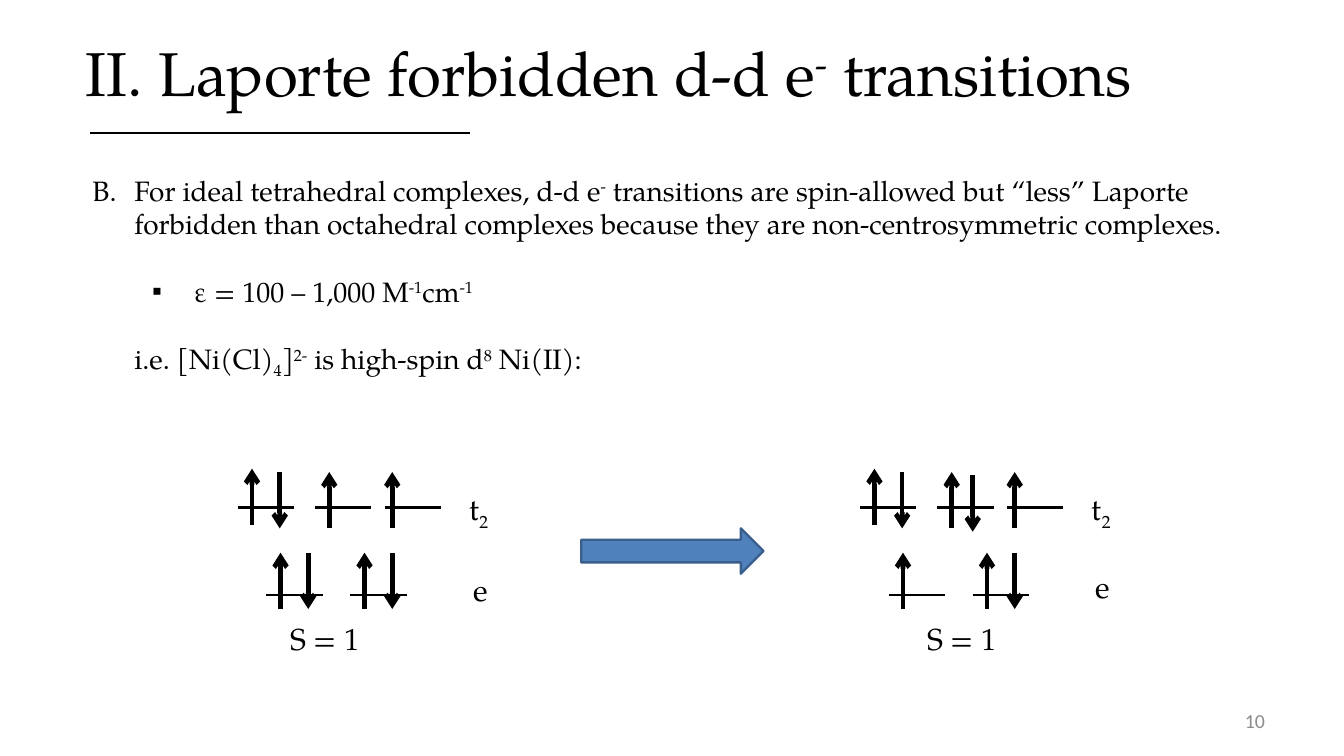
from lxml import etree
from pptx import Presentation
from pptx.dml.color import RGBColor
from pptx.enum.shapes import MSO_CONNECTOR, MSO_SHAPE
from pptx.enum.text import MSO_ANCHOR, MSO_AUTO_SIZE, PP_ALIGN
from pptx.oxml.ns import qn
from pptx.util import Inches, Pt

STRAIGHT = MSO_CONNECTOR.STRAIGHT
RIGHT_ARROW = MSO_SHAPE.RIGHT_ARROW
TOP, MIDDLE = MSO_ANCHOR.TOP, MSO_ANCHOR.MIDDLE
NO_FIT = MSO_AUTO_SIZE.NONE
LEFT, CENTER, RIGHT = PP_ALIGN.LEFT, PP_ALIGN.CENTER, PP_ALIGN.RIGHT

BLACK = RGBColor(0x00, 0x00, 0x00)
GRAY = RGBColor(0x8C, 0x8C, 0x8C)
BLUE = RGBColor(0x4F, 0x81, 0xBD)
NAVY = RGBColor(0x3A, 0x5F, 0x8C)
SERIF, SANS = "TeX Gyre Pagella", "Calibri"
SUPER, SUB = 30000, -25000

TITLE = [("II. Laporte forbidden d-d e", 0), ("-", SUPER), (" transitions", 0)]
POINTS = [
    (0.5, -0.5, None, [
        ("B.\tFor ideal tetrahedral complexes, d-d e", 0), ("-", SUPER),
        (" transitions are spin-allowed but “less” Laporte forbidden than "
         "octahedral complexes because they are non-centrosymmetric complexes.", 0)]),
    (1.21, -0.5, "▪", [
        ("ε = 100 – 1,000 M", 0), ("-1", SUPER), ("cm", 0), ("-1", SUPER)]),
    (0.5, 0, None, [
        ("i.e. [Ni(Cl)", 0), ("4", SUB), ("]", 0), ("2-", SUPER),
        (" is high-spin d", 0), ("8", SUPER), (" Ni(II):", 0)]),
]

UPPER, LOWER = 0.46, 1.5
WIDTH, SPIN = 0.67, 0.67
UP, DOWN = True, False
FULL_T = (UPPER, 0, [(0.17, 0.21, UP), (0.5, 0.25, DOWN)])
HALF_T = (UPPER, 0.92, [(0.17, 0.25, UP)])
PAIR_T = (UPPER, 0.92, [(0.17, 0.25, UP), (0.42, 0.29, DOWN)])
LAST_T = (UPPER, 1.75, [(0.09, 0.25, UP)])
FULL_E = (LOWER, 0.34, [(0.17, 0.17, UP), (0.5, 0.17, DOWN)])
HALF_E = (LOWER, 0.34, [(0.17, 0.17, UP)])
LAST_E = (LOWER, 1.34, [(0.17, 0.17, UP), (0.5, 0.17, DOWN)])
GROUND = [FULL_T, HALF_T, LAST_T, FULL_E, LAST_E]
EXCITED = [FULL_T, PAIR_T, LAST_T, HALF_E, LAST_E]


def write(para, parts, size, color=BLACK, font=SERIF):
    """Write text parts with their baseline shifts into a paragraph."""
    for text, shift in parts:
        run = para.add_run()
        run.text = text
        run.font.size = Pt(size)
        run.font.name = font
        run.font.color.rgb = color
        if shift:
            run._r.get_or_add_rPr().set("baseline", str(shift))


def place(shape, box):
    """Move a shape to a box given in inches."""
    shape.left, shape.top, shape.width, shape.height = map(Inches, box)


def label(slide, box, parts, size, wrap=True):
    """Add a centred text box and return it."""
    shape = slide.shapes.add_textbox(*map(Inches, box))
    shape.text_frame.word_wrap = wrap
    para = shape.text_frame.paragraphs[0]
    para.alignment = CENTER
    write(para, parts, size)
    return shape


def line(slide, start, end, weight, arrow=False):
    """Draw a black line with an optional arrowhead at its end."""
    link = slide.shapes.add_connector(STRAIGHT, *map(Inches, start + end))
    link.line.color.rgb = BLACK
    link.line.width = Pt(weight)
    props = link._element.spPr
    if arrow:
        etree.SubElement(props.find(qn("a:ln")), qn("a:tailEnd"), type="arrow")
    etree.SubElement(props, qn("a:effectLst"))


def header(slide, box):
    """Fill the title and rule it off below."""
    title = slide.shapes.title
    place(title, box)
    frame = title.text_frame
    frame.auto_size = NO_FIT
    frame.vertical_anchor = TOP
    para = frame.paragraphs[0]
    para.alignment = LEFT
    write(para, TITLE, 53)
    left, base = box[0] + 0.15, box[1] + 1.22
    line(slide, (left, base), (left + 4.53, base), 1.5)


def body(slide, box):
    """Fill the body with its indented points."""
    shape = slide.placeholders[1]
    place(shape, box)
    frame = shape.text_frame
    frame.auto_size = NO_FIT
    frame.vertical_anchor = TOP
    for index, (margin, indent, mark, parts) in enumerate(POINTS):
        para = frame.add_paragraph() if index else frame.paragraphs[0]
        para.level = 1 if mark else 0
        para.space_before = Pt(29 if index else 0)
        write(para, parts, 24)
        props = para._p.get_or_add_pPr()
        props.set("marL", str(Inches(margin)))
        props.set("indent", str(Inches(indent)))
        if mark:
            etree.SubElement(props, qn("a:buChar"), char=mark)
        else:
            etree.SubElement(props, qn("a:buNone"))


def levels(slide, box, cells, mid, drop):
    """Draw one set of split d orbitals with spins and labels."""
    left, top, _, _ = box
    for depth, shift, spins in cells:
        x, y = left + shift, top + depth
        line(slide, (x, y), (x + WIDTH, y), 2)
        for step, below, rising in spins:
            foot = (x + step, y + below)
            head = (x + step, y + below - SPIN)
            ends = (foot, head) if rising else (head, foot)
            line(slide, *ends, 4, arrow=True)
    label(slide, (left + 2.65, top + 0.21, 0.44, 0.54), [("t", 0), ("2", SUB)], 26, False)
    label(slide, (left + 2.7, top + drop, 0.38, 0.54), [("e", 0)], 26, False)
    label(slide, (left + mid - 2.95, top + 1.75, 5.9, 0.54), [("S = 1", 0)], 26)


def arrow(slide, box):
    """Draw the block arrow between the two states."""
    shape = slide.shapes.add_shape(RIGHT_ARROW, *map(Inches, box))
    shape.shadow.inherit = False
    shape.fill.solid()
    shape.fill.fore_color.rgb = BLUE
    shape.line.color.rgb = NAVY
    shape.line.width = Pt(2)


def footer(slide, box):
    """Add the page number at the right of its box."""
    shape = slide.shapes.add_textbox(*map(Inches, box))
    frame = shape.text_frame
    frame.word_wrap = True
    frame.vertical_anchor = MIDDLE
    frame.margin_left = frame.margin_right = Inches(0.14)
    frame.margin_top = frame.margin_bottom = Inches(0.07)
    para = frame.paragraphs[0]
    para.alignment = RIGHT
    write(para, [("10", 0)], 17, GRAY, SANS)


def main():
    """Build the slide and save it."""
    deck = Presentation()
    deck.slide_width, deck.slide_height = Inches(16), Inches(9)
    slide = deck.slides.add_slide(deck.slide_layouts[1])
    header(slide, (0.92, 0.36, 15.08, 0.84))
    body(slide, (1, 2.01, 13.92, 3.33))
    levels(slide, (2.83, 5.58, 3.1, 2.3), GROUND, 1.04, 1.17)
    levels(slide, (10.24, 5.58, 3.1, 2.3), EXCITED, 1.21, 1.13)
    arrow(slide, (6.92, 6.29, 2.17, 0.54))
    footer(slide, (11.47, 8.34, 3.73, 0.48))
    deck.save("out.pptx")


if __name__ == "__main__":
    main()
